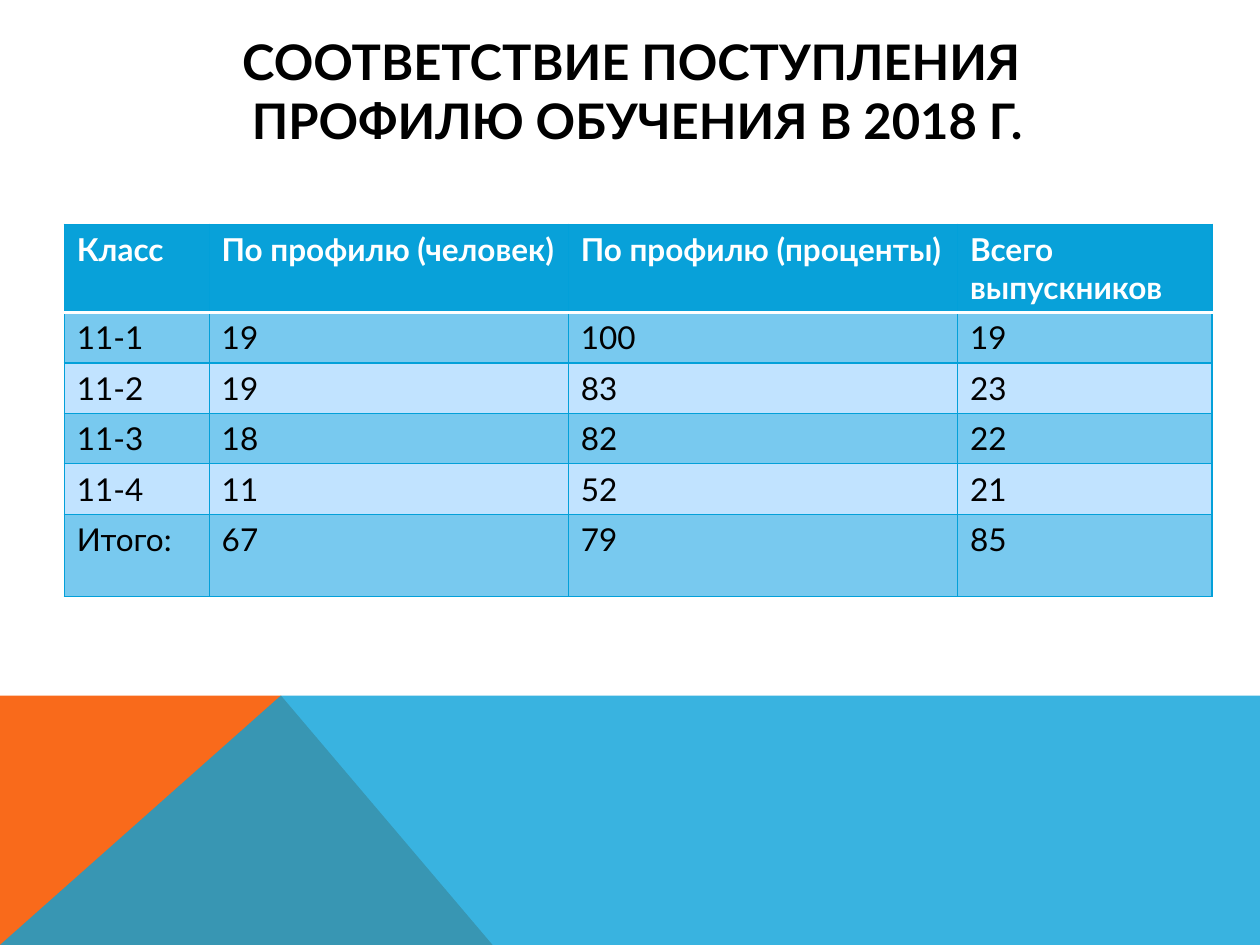
from dataclasses import dataclass

from lxml import etree
from pptx import Presentation
from pptx.dml.color import RGBColor
from pptx.enum.text import MSO_ANCHOR, PP_ALIGN
from pptx.oxml.ns import qn
from pptx.util import Inches, Pt

CENTER = PP_ALIGN.CENTER
MIDDLE = MSO_ANCHOR.MIDDLE


@dataclass(frozen=True)
class Theme:
    font: str = "Lato"
    title_size: int = 28
    table_size: int = 18
    text: str = "000000"
    white: str = "FFFFFF"
    orange: str = "F96A1B"
    blue: str = "08A1D9"
    border: str = "03A0D9"
    bands: tuple = ("78C9EF", "C1E3FF")


class Deck:
    def __init__(self, prs, theme):
        self.theme = theme
        self.slide = prs.slides.add_slide(prs.slide_layouts[6])

    def run(self, p, text, size, color, bold=False):
        r = p.add_run()
        r.text = text
        r.font.name = self.theme.font
        r.font.size = Pt(size)
        r.font.bold = bold
        r.font.color.rgb = RGBColor.from_string(color)

    def polygon(self, points, color, opacity=100):
        start, *rest = [(Inches(x), Inches(y)) for x, y in points]
        builder = self.slide.shapes.build_freeform(*start)
        builder.add_line_segments(rest, close=True)
        s = builder.convert_to_shape()
        s.shadow.inherit = False
        s.line.fill.background()
        s.fill.solid()
        s.fill.fore_color.rgb = RGBColor.from_string(color)
        if opacity < 100:
            clr = s._element.spPr.find(qn("a:solidFill"))[0]
            etree.SubElement(clr, qn("a:alpha"), val=str(opacity * 1000))

    def title(self, lines, x, y, w, h):
        tf = self.slide.shapes.add_textbox(
            Inches(x), Inches(y), Inches(w), Inches(h)).text_frame
        tf.word_wrap = True
        tf.vertical_anchor = MIDDLE
        p = tf.paragraphs[0]
        p.alignment = CENTER
        for i, line in enumerate(lines):
            if i:
                p.add_line_break()
            self.run(p, line, self.theme.title_size, self.theme.text, True)

    def border(self, cell, sides, color, width):
        tc_pr = cell._tc.get_or_add_tcPr()
        for i, side in enumerate(sides):
            ln = etree.Element(qn(f"a:ln{side}"), w=str(Pt(width)))
            fill = etree.SubElement(ln, qn("a:solidFill"))
            etree.SubElement(fill, qn("a:srgbClr"), val=color)
            tc_pr.insert(i, ln)

    def table(self, data, x, y, widths, heights):
        t = self.theme
        table = self.slide.shapes.add_table(
            len(data), len(widths), Inches(x), Inches(y),
            Inches(sum(widths)), Inches(sum(heights))).table
        for col, width in zip(table.columns, widths):
            col.width = Inches(width)
        for row, height in zip(table.rows, heights):
            row.height = Inches(height)
        for i, values in enumerate(data):
            header = i == 0
            fill = t.blue if header else t.bands[(i - 1) % 2]
            for j, value in enumerate(values):
                cell = table.cell(i, j)
                cell.fill.solid()
                cell.fill.fore_color.rgb = RGBColor.from_string(fill)
                self.run(cell.text_frame.paragraphs[0], value, t.table_size,
                         t.white if header else t.text, header)
                if header:
                    self.border(cell, "B", t.white, 2)
                    self.border(cell, "LRT", t.border, 0.75)
                elif i == 1:
                    self.border(cell, "T", t.white, 2)
                    self.border(cell, "LR", t.border, 0.75)
                    self.border_bottom(cell)
                else:
                    self.border(cell, "LRTB", t.border, 0.75)

    def border_bottom(self, cell):
        self.border(cell, "B", self.theme.border, 0.75)
        tc_pr = cell._tc.get_or_add_tcPr()
        bottom = tc_pr.find(qn("a:lnB"))
        tc_pr.find(qn("a:lnT")).addnext(bottom)


def main():
    prs = Presentation()
    prs.slide_width, prs.slide_height = Inches(10), Inches(7.5)
    theme = Theme()
    deck = Deck(prs, theme)

    top, bottom, peak = 5.52, 7.5, 2.23
    deck.polygon([(0, bottom), (0, top), (peak, top), (3.91, bottom)],
                 theme.orange)
    deck.polygon([(0, bottom), (peak, top), (10, top), (10, bottom)],
                 theme.blue, 80)

    deck.title(["СООТВЕТСТВИЕ ПОСТУПЛЕНИЯ", " ПРОФИЛЮ ОБУЧЕНИЯ В 2018 Г."],
               0.51, 0.13, 9, 1.17)
    deck.table([
        ("Класс", "По профилю (человек)", "По профилю (проценты)",
         "Всего выпускников"),
        ("11-1", "19", "100", "19"),
        ("11-2", "19", "83", "23"),
        ("11-3", "18", "82", "22"),
        ("11-4", "11", "52", "21"),
        ("Итого:", "67", "79", "85"),
    ], 0.51, 1.78, [1.15, 2.85, 3.09, 2.02], [0.7] + [0.4] * 4 + [0.65])

    prs.save("out.pptx")


if __name__ == "__main__":
    main()
